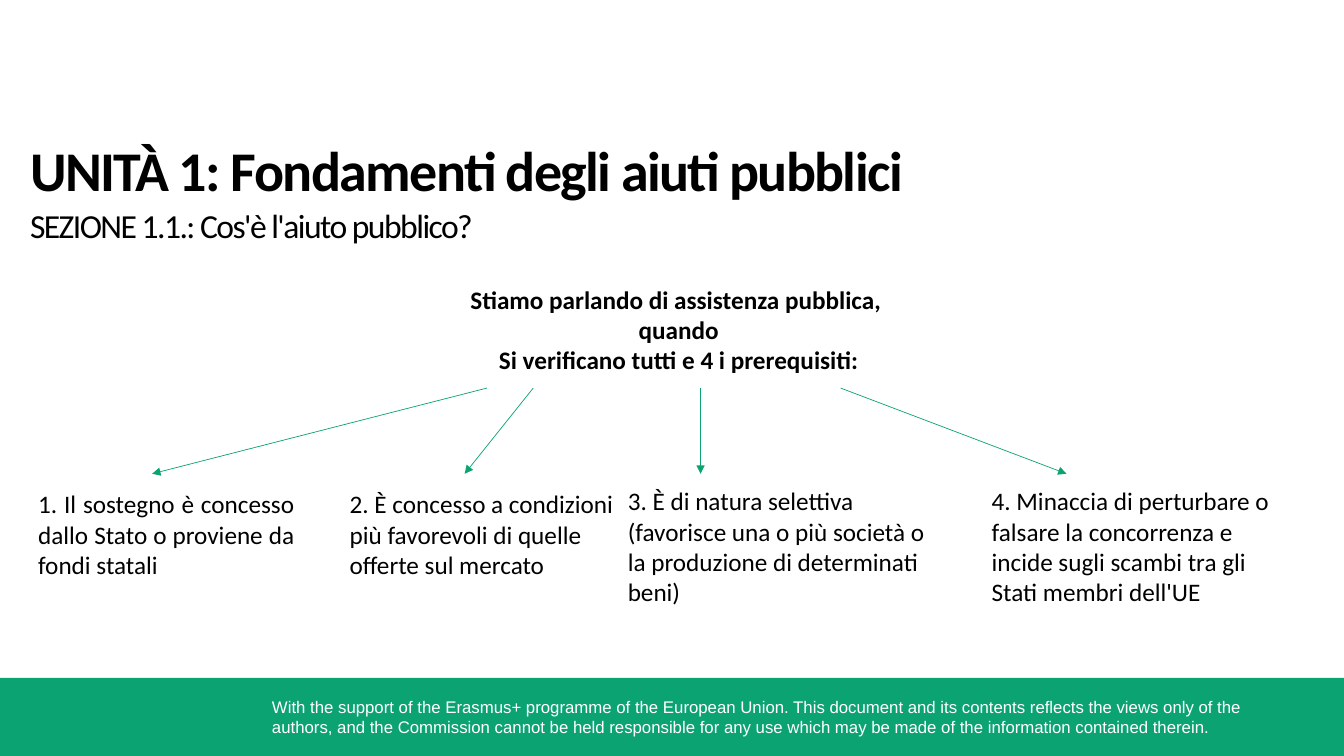
from pptx import Presentation
from pptx.dml.color import RGBColor
from pptx.enum.shapes import MSO_CONNECTOR, MSO_SHAPE
from pptx.enum.text import PP_ALIGN
from pptx.oxml.ns import qn
from pptx.util import Inches, Pt
from lxml import etree

GREEN = RGBColor(0x0C, 0xA3, 0x73)
BLACK = RGBColor(0, 0, 0)
WHITE = RGBColor(0xFF, 0xFF, 0xFF)
LEFT, CENTER, JUSTIFY = PP_ALIGN.LEFT, PP_ALIGN.CENTER, PP_ALIGN.JUSTIFY
STRAIGHT = MSO_CONNECTOR.STRAIGHT
RECTANGLE = MSO_SHAPE.RECTANGLE

COLS, ROWS = 40, 30
TEXT_COL = 0.6
ARROW_TOP, ARROW_BOTTOM = 15.4, 18.8


class SlideBuilder:
    """Places elements on a grid of COLS by ROWS over the slide."""

    def __init__(self, prs):
        self.slide = prs.slides.add_slide(prs.slide_layouts[6])
        self.col = prs.slide_width / COLS
        self.row = prs.slide_height / ROWS

    def grid(self, *lengths):
        """Turn alternating columns and rows into slide units."""
        return [round(n * (self.row if i % 2 else self.col))
                for i, n in enumerate(lengths)]

    def bar(self, col, row, cols, rows):
        sp = self.slide.shapes.add_shape(
            RECTANGLE, *self.grid(col, row, cols, rows))
        sp.shadow.inherit = False
        sp.fill.solid()
        sp.fill.fore_color.rgb = GREEN
        sp.line.fill.background()

    def text(self, box, lines, size=18, font="Calibri", color=BLACK,
             bold=False, align=LEFT):
        sp = self.slide.shapes.add_textbox(*self.grid(*box))
        tf = sp.text_frame
        tf.word_wrap = True
        for i, line in enumerate(lines):
            p = tf.paragraphs[0] if i == 0 else tf.add_paragraph()
            p.add_run().text = line
            p.alignment = align
            p.font.name = font
            p.font.size = Pt(size)
            p.font.bold = bold
            p.font.color.rgb = color
        return tf

    def title(self, box, heading, section):
        tf = self.text(box, [heading, section])
        for p, size, bold in zip(tf.paragraphs, (40, 24), (True, False)):
            p.font.size = Pt(size)
            p.font.bold = bold
            p.runs[0]._r.get_or_add_rPr().set("spc", "-110")
        tf.paragraphs[1].space_before = Pt(1.1)

    def arrow(self, start_col, end_col):
        line = self.slide.shapes.add_connector(
            STRAIGHT, *self.grid(start_col, ARROW_TOP, end_col, ARROW_BOTTOM))
        line.line.color.rgb = GREEN
        line.line.width = Pt(0.5)
        etree.SubElement(line.line._get_or_add_ln(), qn("a:tailEnd"),
                         type="triangle")
        etree.SubElement(line._element.spPr, qn("a:effectLst"))


# column, row, width, height, alignment, text, arrow start and end columns
PREREQUISITES = [
    (0.84, 19.2, 8.22, 4, JUSTIFY,
     "1. Il sostegno è concesso dallo Stato o proviene da fondi statali",
     14.49, 4.53),
    (10.11, 19.2, 8.55, 4, LEFT,
     "2. È concesso a condizioni più favorevoli di quelle offerte sul mercato",
     15.87, 13.83),
    (18.39, 19.08, 9.48, 5.24, LEFT,
     "3. È di natura selettiva (favorisce una o più società o la produzione "
     "di determinati beni)",
     20.85, 20.85),
    (29.22, 19.08, 9.48, 5.24, LEFT,
     "4. Minaccia di perturbare o falsare la concorrenza e incide sugli "
     "scambi tra gli Stati membri dell'UE",
     25.02, 31.74),
]


def main():
    prs = Presentation()
    prs.slide_width, prs.slide_height = Inches(13.33), Inches(7.5)
    s = SlideBuilder(prs)

    s.bar(0, 26.9, COLS, ROWS - 26.9)
    s.text((7.8, 27.44, 31.26, 2),
           ["With the support of the Erasmus+ programme of the European Union. "
            "This document and its contents reflects the views only of the "
            "authors, and the Commission cannot be held responsible for any "
            "use which may be made of the information contained therein."],
           size=12, font="Arial", color=WHITE)
    s.title((TEXT_COL, 5.2, 35.5, 4.76),
            "UNITÀ 1: Fondamenti degli aiuti pubblici",
            "SEZIONE 1.1.: Cos'è l'aiuto pubblico?")
    s.text((TEXT_COL, 11.08, 39.2, 4),
           ["Stiamo parlando di assistenza pubblica, ", "quando",
            "Si verificano tutti e 4 i prerequisiti:"],
           bold=True, align=CENTER)
    for col, row, cols, rows, align, text, start, end in PREREQUISITES:
        s.text((col, row, cols, rows), [text], align=align)
        s.arrow(start, end)

    prs.save("out.pptx")


if __name__ == "__main__":
    main()
